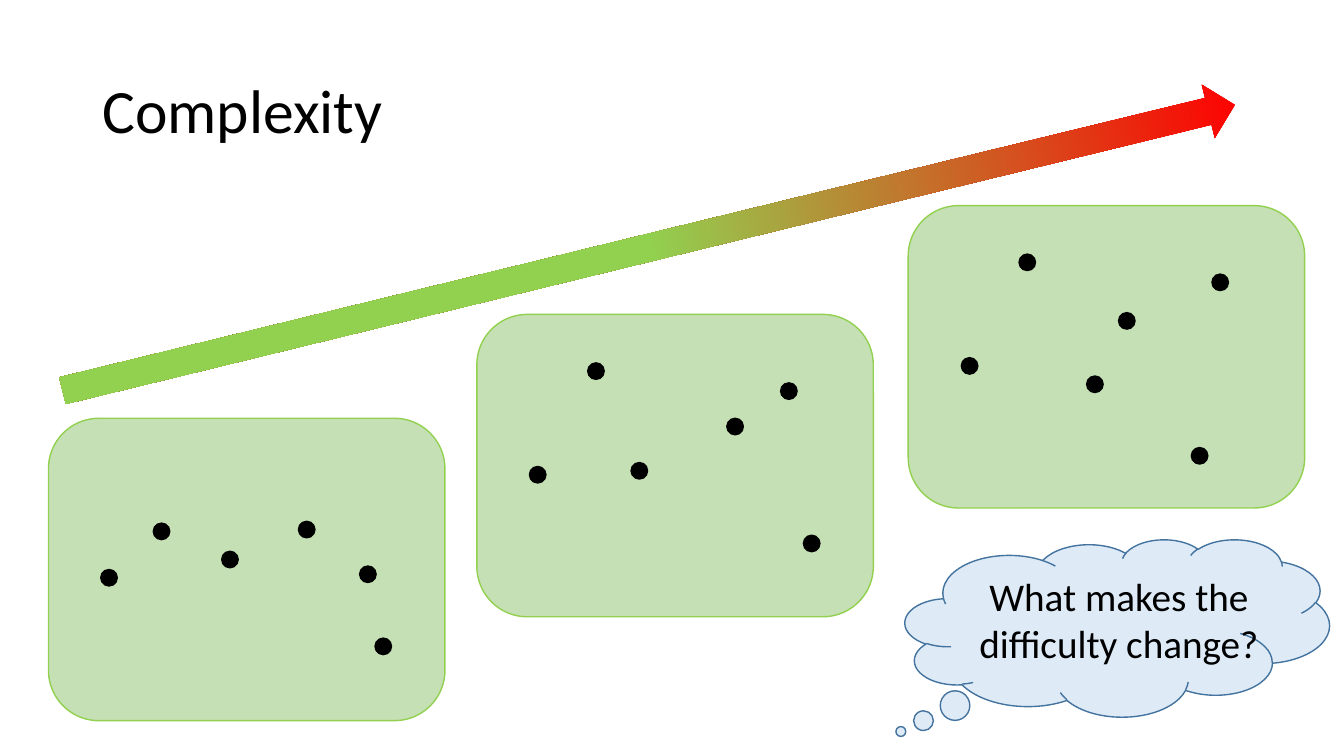
import copy
from dataclasses import dataclass

import lxml.etree
import pptx
import pptx.dml.color
import pptx.enum.dml
import pptx.enum.shapes
import pptx.enum.text
import pptx.oxml.ns
import pptx.shapes.autoshape
import pptx.shapes.shapetree
import pptx.slide
import pptx.text.text
import pptx.util

Pt = pptx.util.Pt
Color = pptx.dml.color.RGBColor
Kind = pptx.enum.shapes.MSO_SHAPE
Anchor = pptx.enum.text.MSO_ANCHOR
Align = pptx.enum.text.PP_ALIGN
Fit = pptx.enum.text.MSO_AUTO_SIZE

BLACK = Color(0x00, 0x00, 0x00)
RED = Color(0xFF, 0x00, 0x00)
LIME = Color(0x92, 0xD0, 0x50)
MINT = Color(0xC5, 0xE0, 0xB4)
SKY = Color(0xDE, 0xEB, 0xF7)
BLUE = Color(0x43, 0x73, 0x9E)
FONT = "Calibri"
DOT = 11.8


@dataclass(frozen=True)
class Box:
    left: float
    top: float
    width: float
    height: float

    def lengths(self) -> tuple[pptx.util.Length, ...]:
        return Pt(self.left), Pt(self.top), Pt(self.width), Pt(self.height)


@dataclass(frozen=True)
class Panel:
    left: float
    top: float
    dots: tuple[tuple[float, float], ...]


PANELS = (
    Panel(648.7, 146.9, ((79.2, 34.6), (38, 108.6), (127.5, 121.7),
                         (150.3, 76.4), (202.3, 172.8), (217, 48.9))),
    Panel(340.6, 224.6, ((79.2, 34.6), (37.6, 108.6), (178.6, 74.2),
                         (110.2, 105.8), (233.3, 157.7), (217, 48.9))),
    Panel(34.6, 298.8, ((74.9, 74.9), (37.4, 108), (178.6, 73.6),
                        (123.8, 95), (233.3, 157), (222.3, 105.5))),
)


def draw(tree: pptx.shapes.shapetree._BaseGroupShapes, kind: Kind, box: Box,
         fill: Color, edge: Color) -> pptx.shapes.autoshape.Shape:
    shape = tree.add_shape(kind, *box.lengths())
    shape.shadow.inherit = False
    shape.fill.solid()
    shape.fill.fore_color.rgb = fill
    shape.line.color.rgb = edge
    shape.line.width = Pt(1)
    return shape


def write(para: pptx.text.text._Paragraph, text: str, size: float) -> None:
    run = para.add_run()
    run.text = text
    run.font.name = FONT
    run.font.size = Pt(size)
    run.font.color.rgb = BLACK


def add_title(slide: pptx.slide.Slide) -> None:
    title = slide.shapes.title
    title.left, title.top, title.width, title.height = Box(66, 28.75, 828, 104.4).lengths()
    frame = title.text_frame
    frame.auto_size = Fit.NONE
    frame.vertical_anchor = Anchor.MIDDLE
    para = frame.paragraphs[0]
    para.alignment = Align.LEFT
    para.line_spacing = 0.9
    write(para, "Complexity", 44)


def add_panel(slide: pptx.slide.Slide, panel: Panel) -> None:
    tree = slide.shapes.add_group_shape().shapes
    draw(tree, Kind.ROUNDED_RECTANGLE, Box(panel.left, panel.top, 283.2, 216), MINT, LIME)
    for x, y in panel.dots:
        draw(tree, Kind.OVAL, Box(panel.left + x, panel.top + y, DOT, DOT), BLACK, BLACK)


def add_arrow(slide: pptx.slide.Slide) -> None:
    arrow = slide.shapes.add_shape(Kind.RIGHT_ARROW, *Box(32.4, 157.4, 862, 39.2).lengths())
    arrow.shadow.inherit = False
    arrow.rotation = 346.3
    arrow.line.fill.background()
    arrow.fill.gradient()
    arrow.fill.gradient_angle = 180
    stops: lxml.etree._Element = arrow._element.spPr.find(
        ".//" + pptx.oxml.ns.qn("a:gsLst"))
    stops.append(copy.deepcopy(stops[-1]))
    marks = ((0, RED), (0.5, LIME), (1, LIME))
    for stop, (place, color) in zip(arrow.fill.gradient_stops, marks):
        stop.position = place
        stop.color.rgb = color


def add_cloud(slide: pptx.slide.Slide) -> None:
    cloud = draw(slide.shapes, Kind.CLOUD_CALLOUT, Box(646.5, 385.2, 303.1, 126.7), SKY, BLUE)
    cloud.adjustments[0] = -0.51
    cloud.adjustments[1] = 0.584
    frame = slide.shapes.add_textbox(*Box(668.9, 405.4, 260.6, 74.9).lengths()).text_frame
    frame.word_wrap = True
    frame.auto_size = Fit.SHAPE_TO_FIT_TEXT
    para = frame.paragraphs[0]
    para.alignment = Align.CENTER
    write(para, "What makes the difficulty change?", 28)


def main() -> None:
    deck = pptx.Presentation()
    deck.slide_width, deck.slide_height = Pt(960), Pt(540)
    slide = deck.slides.add_slide(deck.slide_layouts[5])
    add_title(slide)
    for panel in PANELS:
        add_panel(slide, panel)
    add_arrow(slide)
    add_cloud(slide)
    deck.save("out.pptx")


if __name__ == "__main__":
    main()
